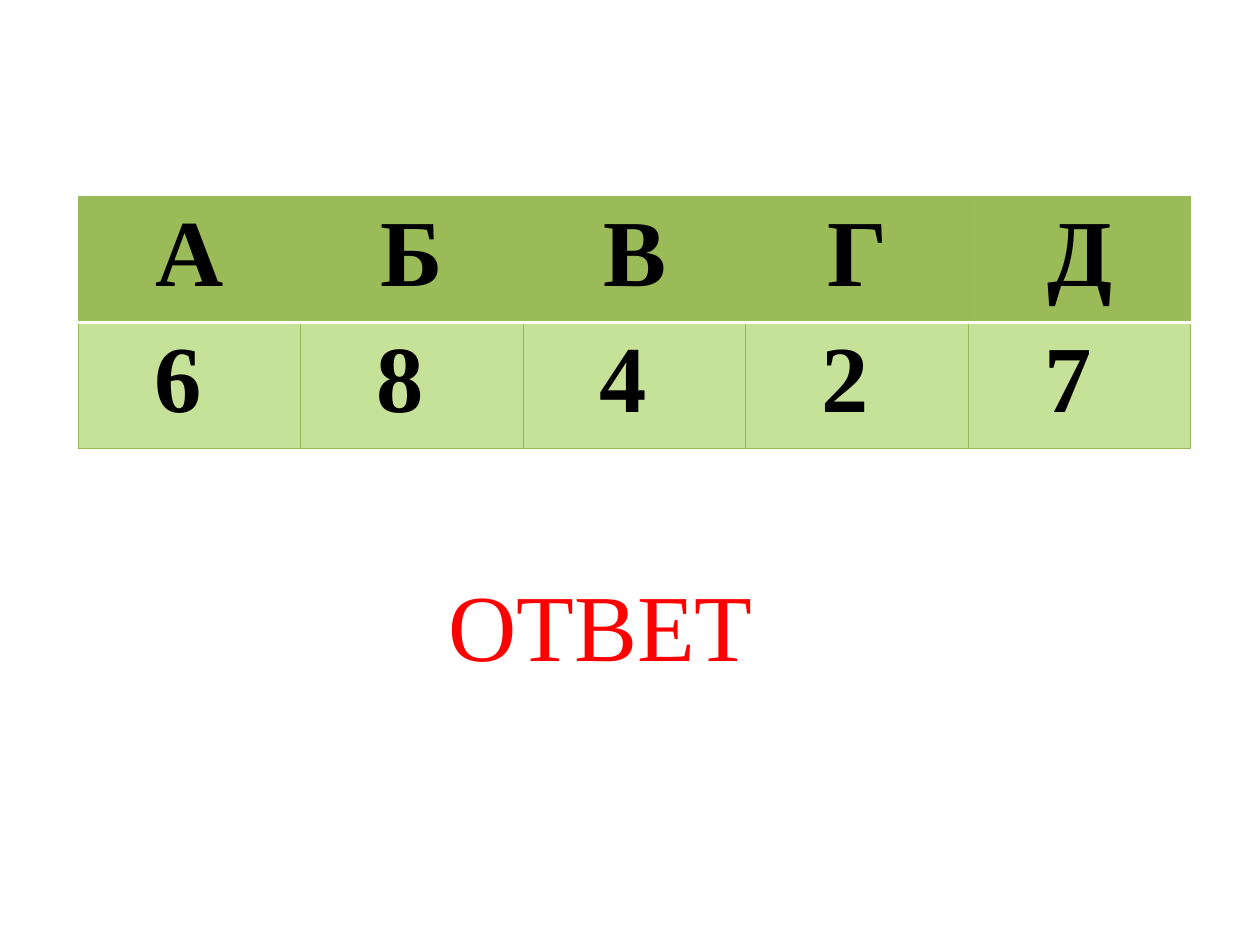
from lxml import etree
from pptx import Presentation
from pptx.dml.color import RGBColor
from pptx.enum import text
from pptx.oxml.ns import qn
from pptx.util import Cm, Pt

# Content
ROWS = [
    ["А", "Б", "В", "Г", "Д"],
    ["6 ", "8 ", "4 ", "2 ", "7 "],  # trailing space shifts the digit left
]
CAPTION = "ОТВЕТ"

COLORS = {"head": "9BBB59", "body": "C6E299", "grid": "98B955",
          "rule": "FFFFFF", "ink": "000000", "caption": "FF0000"}
FONT, SIZE = "Times New Roman", Pt(54)
COL_W, ROW_H = Cm(4.485), Cm(2.54)


def style(p, color, bold=False):
    for r in p.runs:
        r.font.name, r.font.size, r.font.bold = FONT, SIZE, bold
        r.font.color.rgb = RGBColor.from_string(COLORS[color])


def add_borders(cell, lines):
    """Put the cell's lines, given as (side, colour, width), before its fill."""
    tcPr = cell._tc.get_or_add_tcPr()
    for i, (side, color, width) in enumerate(lines):
        ln = etree.Element(qn(f"a:ln{side}"), w=str(Pt(width)))
        fill = etree.SubElement(ln, qn("a:solidFill"))
        etree.SubElement(fill, qn("a:srgbClr"), val=COLORS[color])
        tcPr.insert(i, ln)


prs = Presentation()
prs.slide_width, prs.slide_height = Cm(25.4), Cm(19.05)
s = prs.slides.add_slide(prs.slide_layouts[6])

# Answer table
n_rows, n_cols = len(ROWS), len(ROWS[0])
table = s.shapes.add_table(n_rows, n_cols, Cm(1.58), Cm(3.96),
                           COL_W * n_cols, ROW_H * n_rows).table
for col in table.columns:
    col.width = COL_W
for i, values in enumerate(ROWS):
    table.rows[i].height = ROW_H
    top = ("T", "rule", 2) if i == 1 else ("T", "grid", 0.75)
    bottom = ("B", "rule", 2) if i == 0 else ("B", "grid", 0.75)
    for j, value in enumerate(values):
        cell = table.cell(i, j)
        cell.fill.solid()
        cell.fill.fore_color.rgb = RGBColor.from_string(
            COLORS["body" if i else "head"])
        add_borders(cell, [("L", "grid", 0.75), ("R", "grid", 0.75), top, bottom])
        p = cell.text_frame.paragraphs[0]
        p.text = value
        p.alignment = text.PP_ALIGN.CENTER
        style(p, "ink", bold=True)

# Caption, indented under the table
tf = s.shapes.add_textbox(Cm(2.39), Cm(11.3), Cm(20.04), Cm(2.57)).text_frame
tf.word_wrap = True
tf.auto_size = text.MSO_AUTO_SIZE.SHAPE_TO_FIT_TEXT
p = tf.paragraphs[0]
p.text = CAPTION
p._p.get_or_add_pPr().set("marL", str(Cm(6.4)))
style(p, "caption")

prs.save("out.pptx")
